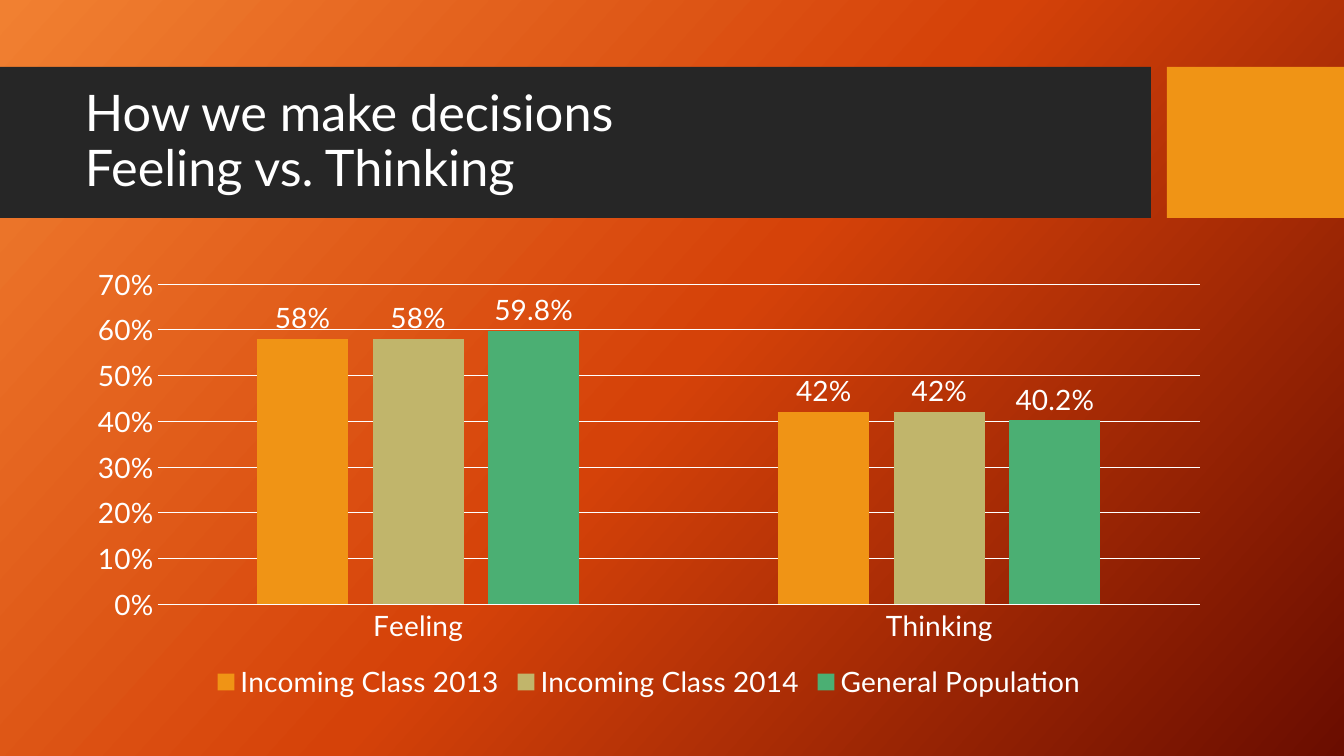
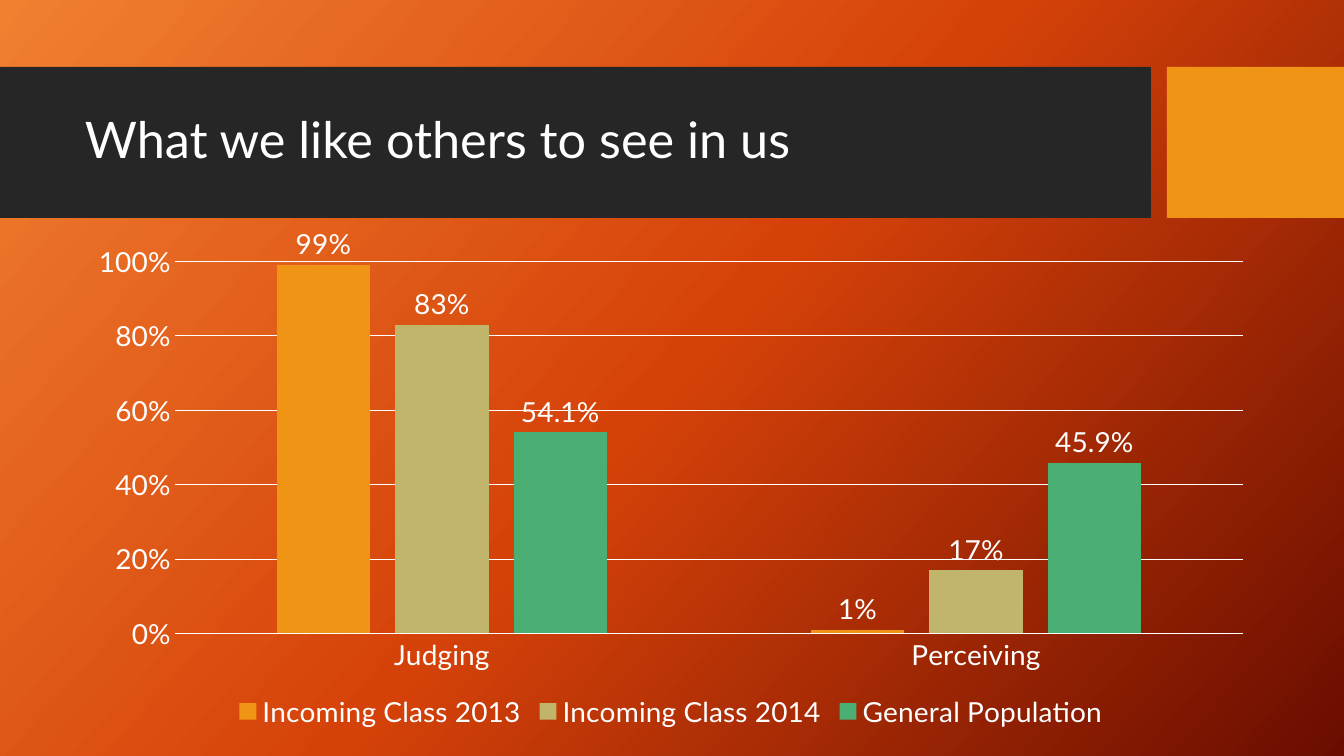
from copy import deepcopy

from pptx import Presentation
from pptx.chart.data import CategoryChartData
from pptx.dml.color import RGBColor
from pptx.enum.chart import XL_CHART_TYPE as ChartType
from pptx.enum.chart import XL_LABEL_POSITION as LabelPosition
from pptx.enum.chart import XL_LEGEND_POSITION as LegendPosition
from pptx.enum.chart import XL_TICK_MARK as TickMark
from pptx.enum.shapes import MSO_SHAPE as Shape
from pptx.enum.text import MSO_ANCHOR as Anchor
from pptx.oxml.ns import qn
from pptx.util import Pt

SLIDE_WIDTH, SLIDE_HEIGHT = 1344, 756
EMU_PER_PX = 12192000 / SLIDE_WIDTH

FONT = "Lato"
WHITE = RGBColor(0xFF, 0xFF, 0xFF)
CHARCOAL = RGBColor(0x26, 0x26, 0x26)
AMBER = RGBColor(0xF0, 0x94, 0x15)
KHAKI = RGBColor(0xC1, 0xB5, 0x6B)
GREEN = RGBColor(0x4B, 0xAF, 0x73)
BACKGROUND_STOPS = [
    (0, RGBColor(0xF1, 0x80, 0x31)),
    (0.5, RGBColor(0xD5, 0x42, 0x09)),
    (1, RGBColor(0x6A, 0x0D, 0x00)),
]

BAND_TOP, BAND_HEIGHT = 67, 151
CHART_LEFT = 75
# Name, colour and label format of each group of people
GROUPS = [
    ("Incoming Class 2013", AMBER, "0%"),
    ("Incoming Class 2014", KHAKI, "0%"),
    ("General Population", GREEN, "0.0%"),
]


def px(*lengths):
    """Turn pixel lengths into a list of EMU."""
    return [round(length * EMU_PER_PX) for length in lengths]


def style_font(font, size):
    font.name = FONT
    font.size = Pt(size)
    font.color.rgb = WHITE


def style_line(line):
    line.color.rgb = WHITE
    line.width = Pt(0.75)


def paint_background(slide):
    fill = slide.background.fill
    fill.gradient()
    fill.gradient_angle = 360 - 42
    stop_list = slide.element.find(".//" + qn("a:gsLst"))
    stop_list.append(deepcopy(stop_list[-1]))
    for stop, (position, color) in zip(fill.gradient_stops, BACKGROUND_STOPS):
        stop.position = position
        stop.color.rgb = color


def add_band(slide, left, width, color):
    band = slide.shapes.add_shape(
        Shape.RECTANGLE, *px(left, BAND_TOP, width, BAND_HEIGHT))
    band.shadow.inherit = False
    band.fill.solid()
    band.fill.fore_color.rgb = color
    band.line.fill.background()


def add_title(slide, lines):
    frame = slide.shapes.add_textbox(*px(75, 83, 1059, 119)).text_frame
    frame.word_wrap = True
    frame.vertical_anchor = Anchor.MIDDLE
    paragraph = frame.paragraphs[0]
    paragraph.line_spacing = 0.9
    for index, line in enumerate(lines):
        if index:
            paragraph.add_line_break()
        run = paragraph.add_run()
        run.text = line
        style_font(run.font, 36)


def add_titled_slide(presentation, *title_lines):
    slide = presentation.slides.add_slide(presentation.slide_layouts[6])
    paint_background(slide)
    add_band(slide, 0, 1151, CHARCOAL)
    add_band(slide, 1167, SLIDE_WIDTH - 1167, AMBER)
    add_title(slide, title_lines)
    return slide


def style_axes(chart, maximum, major_unit):
    category_axis, value_axis = chart.category_axis, chart.value_axis
    for axis in (category_axis, value_axis):
        axis.major_tick_mark = axis.minor_tick_mark = TickMark.NONE
        style_font(axis.tick_labels.font, 20)
    style_line(category_axis.format.line)

    value_axis.minimum_scale = 0
    value_axis.maximum_scale = maximum
    value_axis.major_unit = major_unit
    value_axis.format.line.fill.background()
    style_line(value_axis.major_gridlines.format.line)
    value_axis.tick_labels.number_format = "0%"
    value_axis.tick_labels.number_format_is_linked = False


def style_series(series, color, label_format):
    series.format.fill.solid()
    series.format.fill.fore_color.rgb = color
    labels = series.data_labels
    labels.show_value = True
    labels.position = LabelPosition.OUTSIDE_END
    labels.number_format = label_format
    labels.number_format_is_linked = False
    style_font(labels.font, 20)


def add_group_chart(slide, box, categories, values, maximum, major_unit):
    """Add a column chart with one row of values for each of GROUPS."""
    data = CategoryChartData(number_format="0%")
    data.categories = categories
    for (name, _, label_format), row in zip(GROUPS, values):
        data.add_series(name, row, number_format=label_format)
    chart = slide.shapes.add_chart(
        ChartType.COLUMN_CLUSTERED, *px(*box), data).chart
    chart.has_title = False
    style_font(chart.font, 20)

    chart.has_legend = True
    chart.legend.position = LegendPosition.BOTTOM
    chart.legend.include_in_layout = False
    style_font(chart.legend.font, 20)

    style_axes(chart, maximum, major_unit)
    plot = chart.plots[0]
    plot.vary_by_categories = False
    plot.gap_width = 219
    plot.overlap = -27
    for series, (_, color, label_format) in zip(plot.series, GROUPS):
        style_series(series, color, label_format)


def main():
    presentation = Presentation()
    presentation.slide_width, presentation.slide_height = px(
        SLIDE_WIDTH, SLIDE_HEIGHT)

    decisions = add_titled_slide(
        presentation, "How we make decisions", "Feeling vs. Thinking")
    add_group_chart(
        decisions, (CHART_LEFT, 258, 1148, 447), ["Feeling", "Thinking"],
        [(0.58, 0.42), (0.58, 0.42), (0.598, 0.402)],
        maximum=0.7, major_unit=0.1)

    impressions = add_titled_slide(
        presentation, "What we like others to see in us")
    add_group_chart(
        impressions, (CHART_LEFT, 227, 1192, 507), ["Judging", "Perceiving"],
        [(0.99, 0.01), (0.83, 0.17), (0.541, 0.459)],
        maximum=1, major_unit=0.2)

    presentation.save("out.pptx")


if __name__ == "__main__":
    main()
